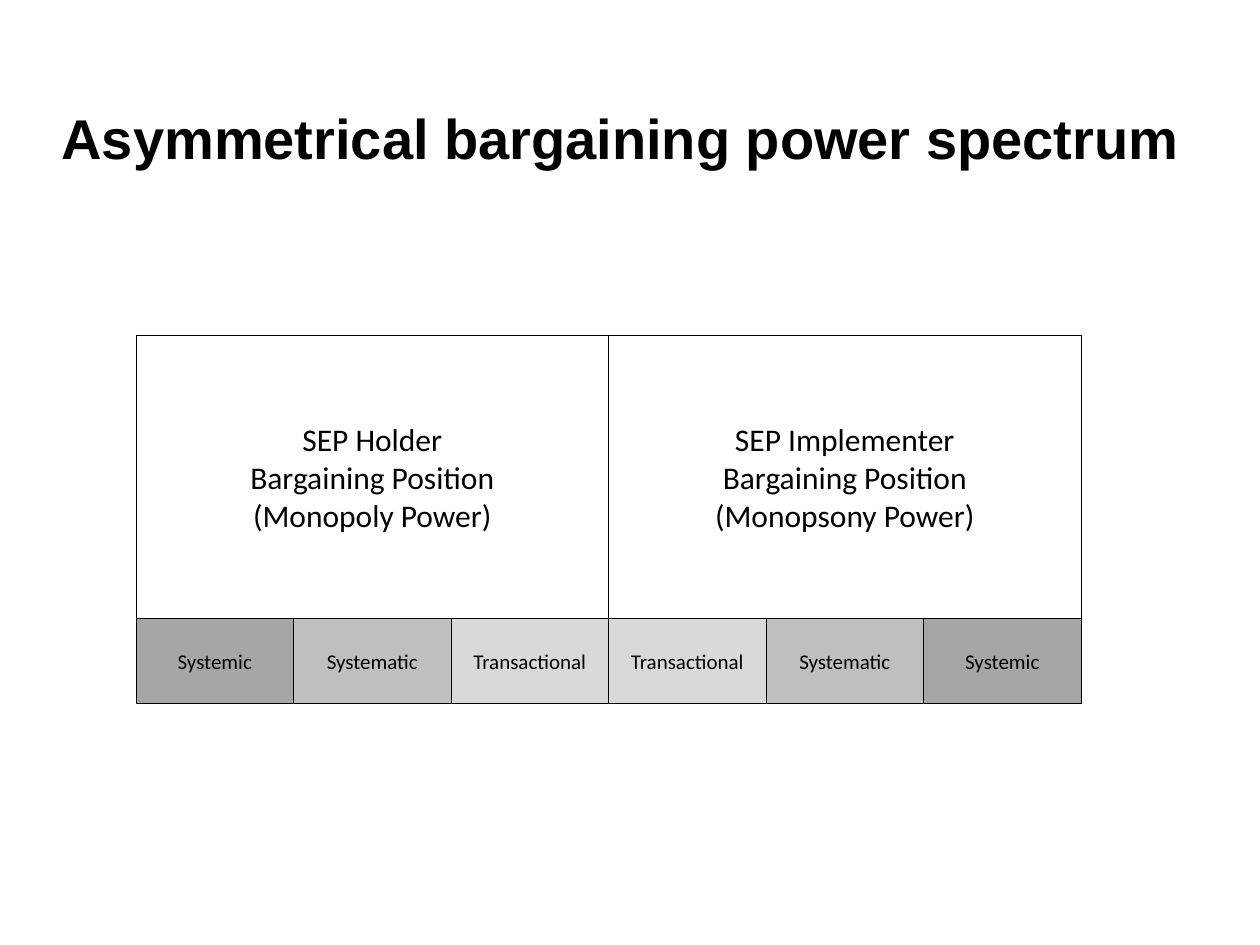
from pptx import Presentation
from pptx.dml.color import RGBColor
from pptx.enum import shapes, text
from pptx.util import Inches, Pt

BLACK = RGBColor(0x00, 0x00, 0x00)
DARK = RGBColor(0xA6, 0xA6, 0xA6)
MID = RGBColor(0xBF, 0xBF, 0xBF)
LIGHT = RGBColor(0xD9, 0xD9, 0xD9)

LEFT, TOP = 1.08, 2.66
POSITION_W, POSITION_H = 3.75, 2.25
LEVEL_W, LEVEL_H = POSITION_W / 3, 0.67

prs = Presentation()
prs.slide_width, prs.slide_height = Inches(10), Inches(7.5)
s = prs.slides.add_slide(prs.slide_layouts[6])


def write(sp, content, size, font, align, bold=False):
    tf = sp.text_frame
    tf.word_wrap = True
    tf.vertical_anchor = text.MSO_ANCHOR.MIDDLE
    tf.text = content
    for p in tf.paragraphs:
        p.alignment = align
        for r in p.runs:
            r.font.name, r.font.size, r.font.bold = font, Pt(size), bold
            r.font.color.rgb = BLACK


def add_box(x, y, w, h, content, size, fill=None):
    sp = s.shapes.add_shape(shapes.MSO_SHAPE.RECTANGLE,
                            Inches(x), Inches(y), Inches(w), Inches(h))
    sp.shadow.inherit = False
    if fill is None:
        sp.fill.background()
    else:
        sp.fill.solid()
        sp.fill.fore_color.rgb = fill
    sp.line.color.rgb = BLACK
    sp.line.width = Pt(0.5)
    write(sp, content, size, "Calibri", text.PP_ALIGN.CENTER)


# Title
title = s.shapes.add_textbox(Inches(0.39), Inches(0.4), Inches(9.24), Inches(1.45))
write(title, "Asymmetrical bargaining power spectrum", 32, "Arial",
      text.PP_ALIGN.LEFT, bold=True)
title.text_frame.paragraphs[0].line_spacing = 0.9

# Spectrum of levels, mirrored around the centre
levels = [("Systemic", DARK), ("Systematic", MID), ("Transactional", LIGHT)]
for i, (label, fill) in enumerate(levels + levels[::-1]):
    add_box(LEFT + i * LEVEL_W, TOP + POSITION_H, LEVEL_W, LEVEL_H, label, 12, fill)

# Bargaining positions
for i, (party, power) in enumerate([("Holder", "Monopoly"),
                                    ("Implementer", "Monopsony")]):
    add_box(LEFT + i * POSITION_W, TOP, POSITION_W, POSITION_H,
            f"SEP {party}\nBargaining Position\n({power} Power)", 18)

prs.save("out.pptx")
